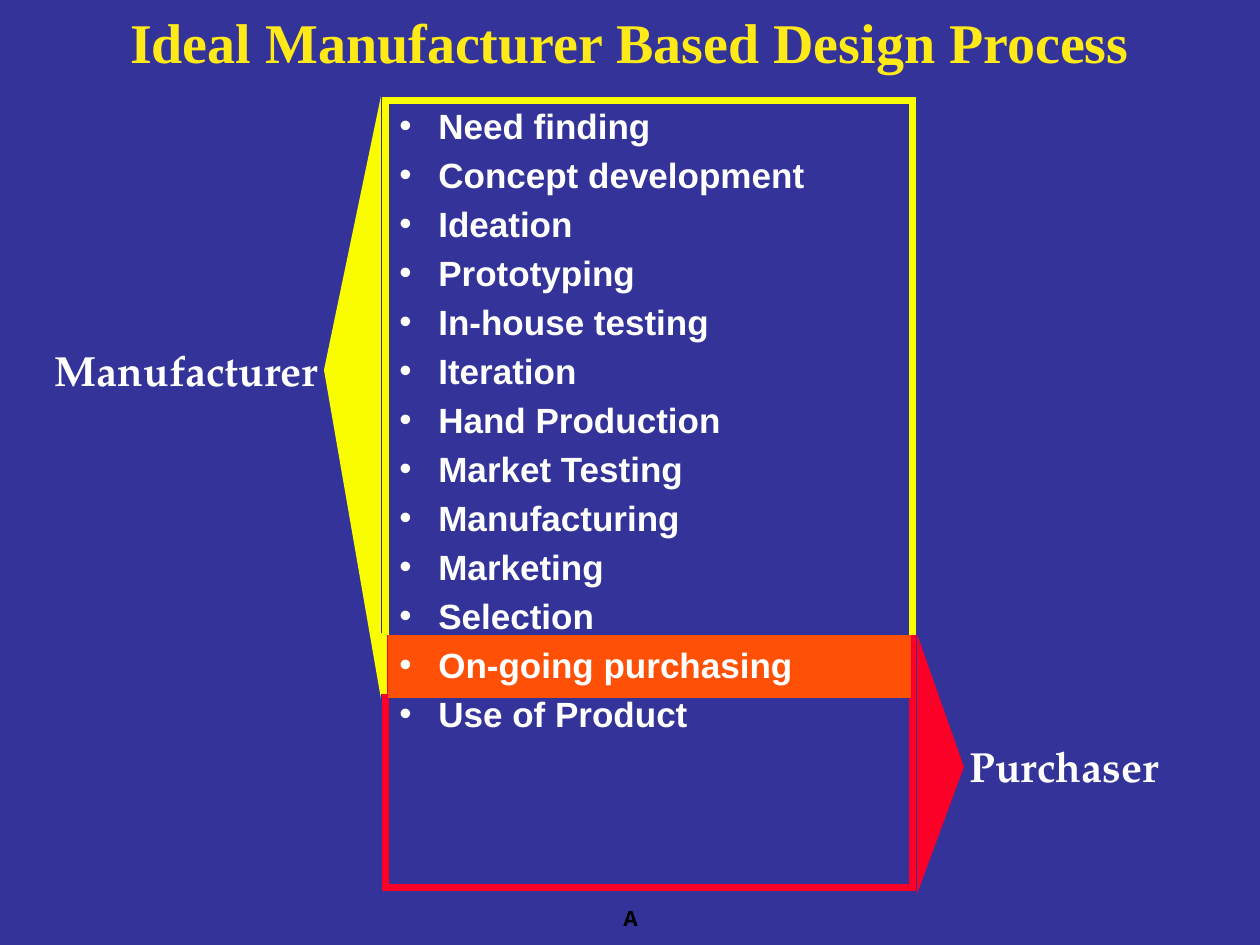
from lxml.etree import SubElement
from pptx import Presentation
from pptx.dml.color import RGBColor
from pptx.enum.shapes import MSO_CONNECTOR, MSO_SHAPE
from pptx.enum.text import MSO_ANCHOR, MSO_AUTO_SIZE, PP_ALIGN
from pptx.oxml.ns import qn
from pptx.util import Emu, Pt

PX = 914400 // 126
YELLOW = "FAFD00"
RED = "FC0128"
ORANGE = "FF5008"
WHITE = "FFFFFF"
STEPS = [
    "Need finding", "Concept development", "Ideation", "Prototyping",
    "In-house testing", "Iteration", "Hand Production", "Market Testing",
    "Manufacturing", "Marketing", "Selection", "On-going purchasing",
    "Use of Product",
]


def px(length):
    return Emu(length * PX)


def color(value):
    return RGBColor.from_string(value)


def set_line(shape, value, width):
    shape.line.color.rgb = color(value)
    shape.line.width = Pt(width)


def add_stage(slide, box, outline, width, fill=None):
    stage = slide.shapes.add_shape(MSO_SHAPE.RECTANGLE, *map(px, box))
    stage.shadow.inherit = False
    if fill:
        stage.fill.solid()
        stage.fill.fore_color.rgb = color(fill)
    else:
        stage.fill.background()
    set_line(stage, outline, width)
    SubElement(stage.line._get_or_add_ln(), qn("a:miter"), lim="800000")


def add_pointer(slide, points, fill):
    builder = slide.shapes.build_freeform(*points[0], scale=PX)
    builder.add_line_segments(points[1:], close=True)
    pointer = builder.convert_to_shape()
    pointer.shadow.inherit = False
    pointer.fill.solid()
    pointer.fill.fore_color.rgb = color(fill)
    pointer.line.fill.background()


def add_edge(slide, start, end, value, width):
    edge = slide.shapes.add_connector(
        MSO_CONNECTOR.STRAIGHT, *map(px, start + end))
    set_line(edge, value, width)
    SubElement(edge._element.spPr, qn("a:effectLst"))


def style_paragraph(paragraph, font, size, value):
    for run in paragraph.runs:
        run.font.name = font
        run.font.size = Pt(size)
        run.font.bold = True
        run.font.color.rgb = color(value)


def add_label(slide, text, box, font, size, value,
              align=PP_ALIGN.LEFT, wrap=False):
    label = slide.shapes.add_textbox(*map(px, box))
    frame = label.text_frame
    frame.text = text
    frame.word_wrap = wrap
    frame.auto_size = MSO_AUTO_SIZE.SHAPE_TO_FIT_TEXT
    frame.paragraphs[0].alignment = align
    style_paragraph(frame.paragraphs[0], font, size, value)


def add_bullets(slide, items, box):
    frame = slide.shapes.add_textbox(*map(px, box)).text_frame
    frame.text = "\n".join(items)
    frame.word_wrap = True
    frame.vertical_anchor = MSO_ANCHOR.TOP
    for paragraph in frame.paragraphs:
        style_paragraph(paragraph, "Arial", 20, WHITE)
        paragraph.space_before = Pt(4)
        properties = paragraph._p.get_or_add_pPr()
        properties.set("marL", str(px(39)))
        properties.set("indent", str(px(-39)))
        SubElement(properties, qn("a:buFont"), typeface="Arial")
        SubElement(properties, qn("a:buChar"), char="•")


def main():
    presentation = Presentation()
    presentation.slide_width = px(1260)
    presentation.slide_height = px(945)
    slide = presentation.slides.add_slide(presentation.slide_layouts[6])
    slide.background.fill.solid()
    slide.background.fill.fore_color.rgb = color("333399")

    add_pointer(slide, [(381, 96), (324, 370), (381, 699)], YELLOW)
    add_stage(slide, (386, 100, 527, 565), YELLOW, 4)
    add_stage(slide, (386, 639, 527, 249), RED, 4)
    add_stage(slide, (393, 640, 513, 53), ORANGE, 6, ORANGE)

    add_label(slide, "Manufacturer", (42, 338, 289, 63),
              "TeX Gyre Pagella", 24, WHITE, PP_ALIGN.CENTER)
    add_label(slide, "Purchaser", (957, 734, 214, 63),
              "TeX Gyre Pagella", 24, WHITE)
    add_label(slide, "Ideal Manufacturer Based Design Process",
              (11, 1, 1238, 80), "Times New Roman", 32, "FFEA18",
              PP_ALIGN.CENTER, True)
    add_bullets(slide, STEPS, (387, 98, 466, 777))

    add_pointer(slide, [(917, 634), (964, 767), (917, 894)], RED)
    add_edge(slide, (384, 633), (384, 694), YELLOW, 4)
    add_label(slide, "A", (611, 899, 42, 38), "Open Sans", 12, "000000")
    presentation.save("out.pptx")


if __name__ == "__main__":
    main()
